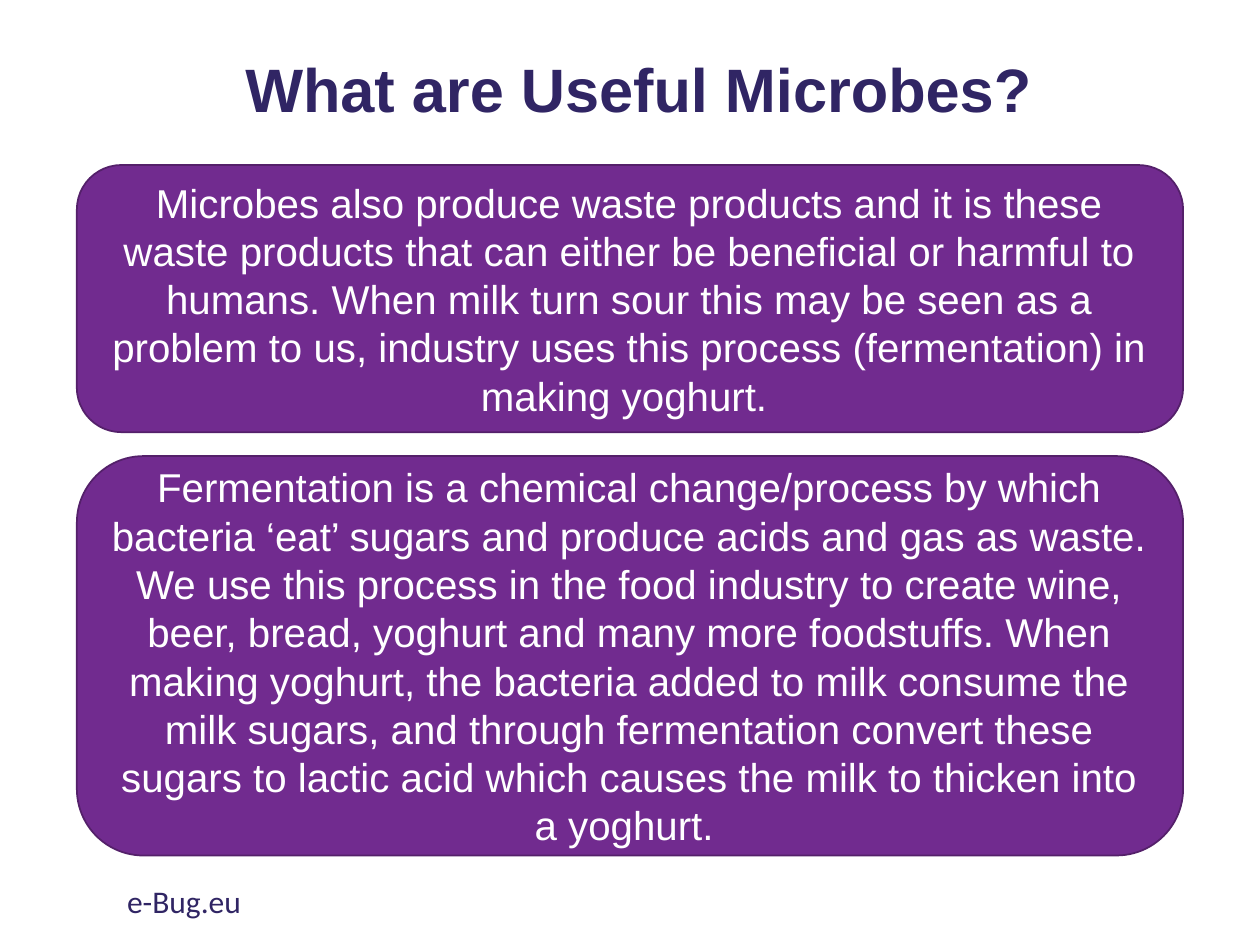
"""Build the slide that explains useful microbes and fermentation."""
from dataclasses import dataclass

import pptx
import pptx.dml.color
import pptx.enum.shapes
import pptx.enum.text
import pptx.util

WIDTH, HEIGHT = 10, 7.5
PANEL_LEFT, PANEL_WIDTH = 0.061, 0.878
NAVY, PURPLE, DARK_PURPLE, WHITE = "302564", "712B8F", "54206A", "FFFFFF"
CENTER = pptx.enum.text.PP_ALIGN.CENTER
LEFT = pptx.enum.text.PP_ALIGN.LEFT
MIDDLE = pptx.enum.text.MSO_ANCHOR.MIDDLE
TOP = pptx.enum.text.MSO_ANCHOR.TOP


@dataclass(frozen=True)
class Area:
    """Hold a position and size as shares of the slide."""

    left: float
    top: float
    width: float
    height: float

    def lengths(self) -> list:
        """Return left, top, width and height as slide lengths."""
        return [
            pptx.util.Inches(share * side)
            for share, side in (
                (self.left, WIDTH),
                (self.top, HEIGHT),
                (self.width, WIDTH),
                (self.height, HEIGHT),
            )
        ]


@dataclass(frozen=True)
class Panel:
    """Describe a rounded panel by its vertical place and its text."""

    top: float
    height: float
    text: str


PANELS = (
    Panel(
        1.31 / HEIGHT,
        2.12 / HEIGHT,
        "Microbes also produce waste products and it is these waste products "
        "that can either be beneficial or harmful to humans. When milk turn "
        "sour this may be seen as a problem to us, industry uses this process "
        "(fermentation) in making yoghurt. ",
    ),
    Panel(
        3.62 / HEIGHT,
        3.17 / HEIGHT,
        "Fermentation is a chemical change/process by which bacteria ‘eat’ "
        "sugars and produce acids and gas as waste. We use this process in the "
        "food industry to create wine, beer, bread, yoghurt and many more "
        "foodstuffs. When making yoghurt, the bacteria added to milk consume "
        "the milk sugars, and through fermentation convert these sugars to "
        "lactic acid which causes the milk to thicken into a yoghurt. ",
    ),
)


def color(value: str) -> pptx.dml.color.RGBColor:
    """Turn a hex string into a colour."""
    return pptx.dml.color.RGBColor.from_string(value)


def write(shape, text: str, *, size: float, ink: str, font: str = "Arial",
          bold: bool = False, align=CENTER, anchor=MIDDLE,
          spacing: float = 1.0) -> None:
    """Write one formatted paragraph into a shape."""
    frame = shape.text_frame
    frame.word_wrap = True
    frame.vertical_anchor = anchor
    paragraph = frame.paragraphs[0]
    paragraph.alignment = align
    paragraph.line_spacing = spacing
    run = paragraph.add_run()
    run.text = text
    run.font.name = font
    run.font.size = pptx.util.Pt(size)
    run.font.bold = bold
    run.font.color.rgb = color(ink)


def add_label(slide, area: Area, text: str, **text_format) -> None:
    """Add a text box with formatted text."""
    write(slide.shapes.add_textbox(*area.lengths()), text, **text_format)


def add_panel(slide, panel: Panel) -> None:
    """Add a rounded purple panel with white text."""
    area = Area(PANEL_LEFT, panel.top, PANEL_WIDTH, panel.height)
    shape = slide.shapes.add_shape(
        pptx.enum.shapes.MSO_SHAPE.ROUNDED_RECTANGLE, *area.lengths()
    )
    shape.shadow.inherit = False
    shape.fill.solid()
    shape.fill.fore_color.rgb = color(PURPLE)
    shape.line.color.rgb = color(DARK_PURPLE)
    shape.line.width = pptx.util.Pt(1)
    write(shape, panel.text, size=23, ink=WHITE)


def main() -> None:
    """Build and save the presentation."""
    presentation = pptx.Presentation()
    presentation.slide_width = pptx.util.Inches(WIDTH)
    presentation.slide_height = pptx.util.Inches(HEIGHT)
    slide = presentation.slides.add_slide(presentation.slide_layouts[6])
    add_label(slide, Area(0.076, 0.28 / HEIGHT, 0.862, 0.91 / HEIGHT),
              "What are Useful Microbes?", size=35, ink=NAVY, bold=True,
              spacing=0.9)
    for panel in PANELS:
        add_panel(slide, panel)
    add_label(slide, Area(0.091, 6.95 / HEIGHT, 0.338, 0.4 / HEIGHT),
              "e-Bug.eu", size=18, ink=NAVY, font="Calibri", align=LEFT,
              anchor=TOP)
    presentation.save("out.pptx")


if __name__ == "__main__":
    main()
